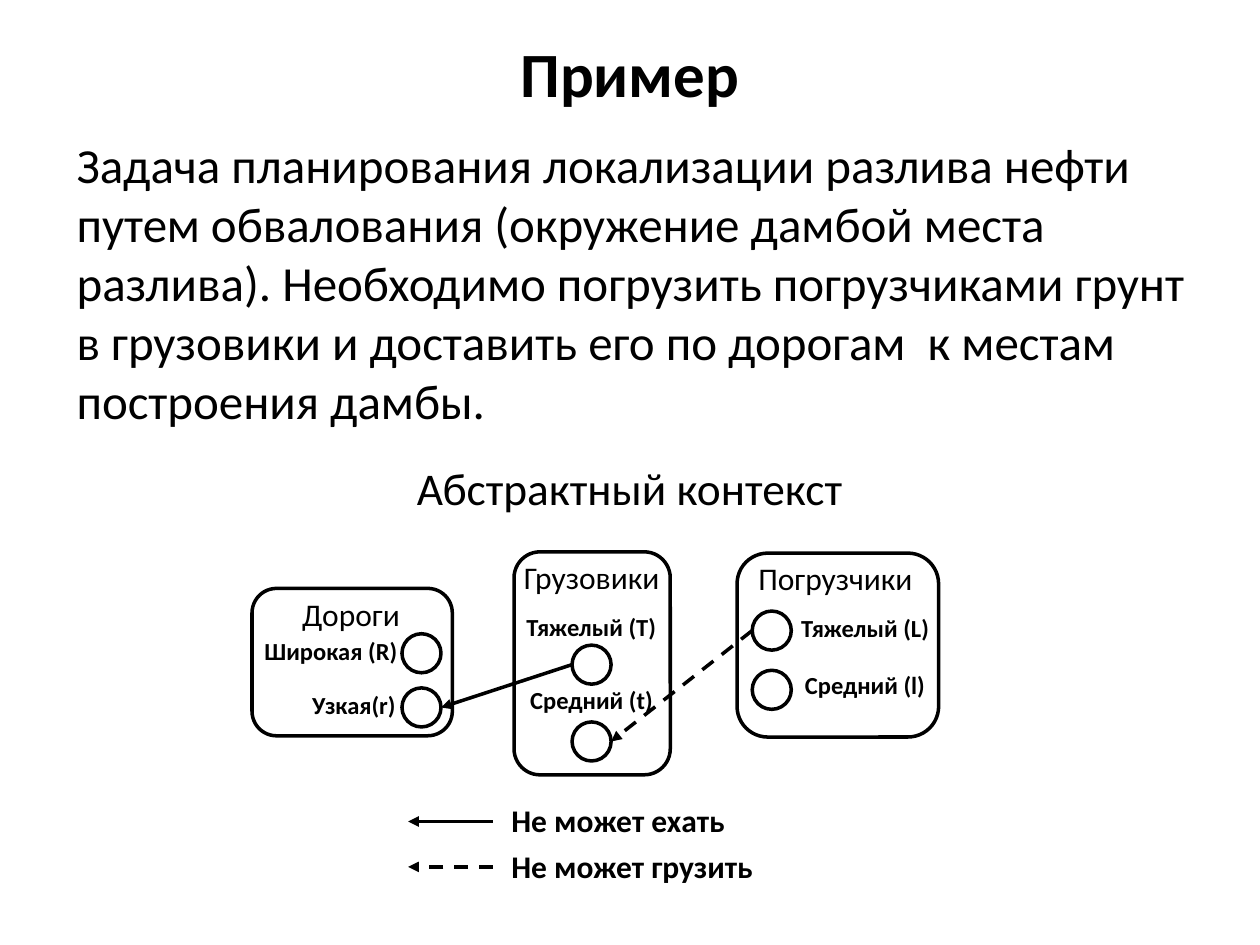
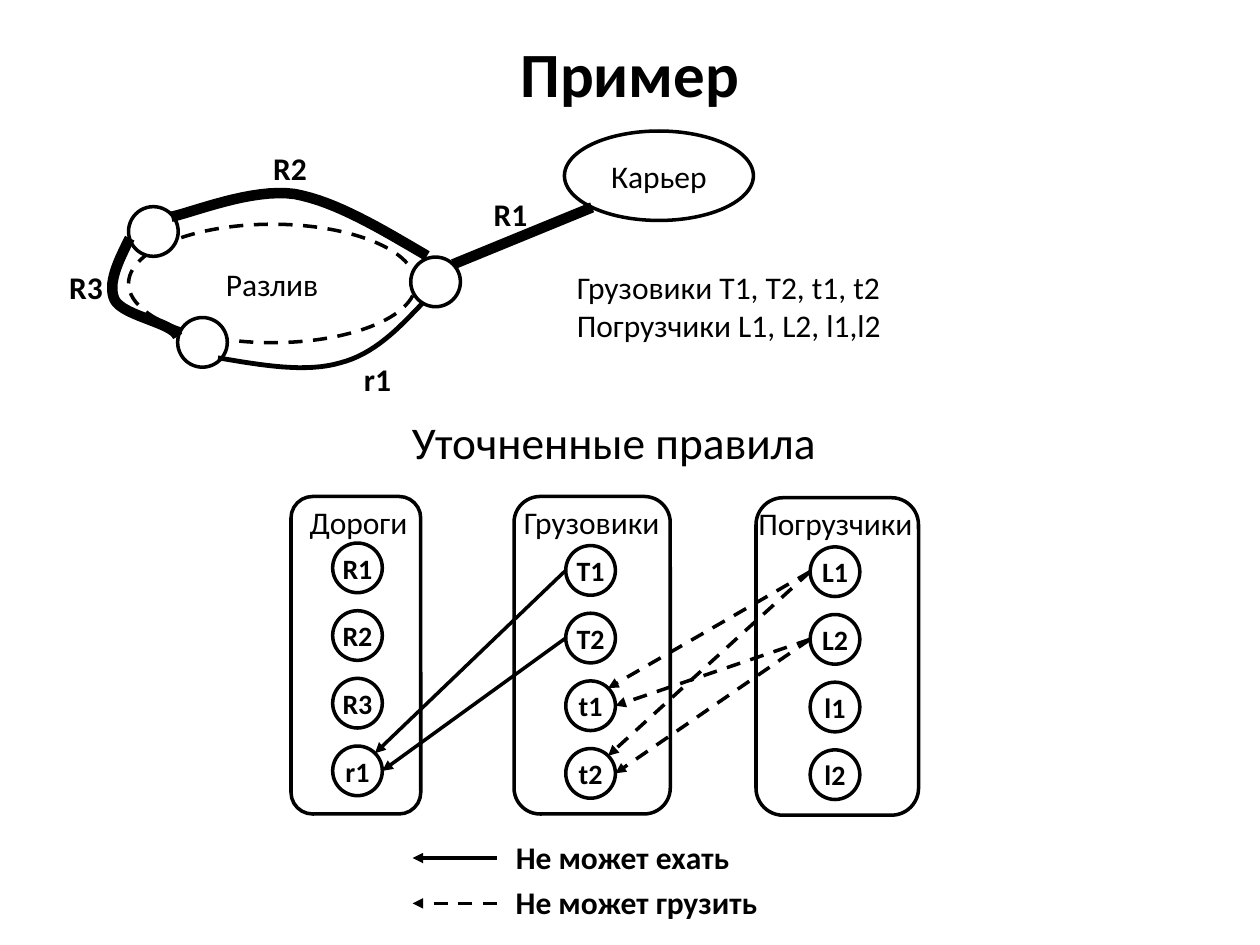
import math
from dataclasses import dataclass

from lxml import etree
from pptx import Presentation
from pptx import util as u
from pptx.dml.color import RGBColor
from pptx.enum import dml, shapes, text
from pptx.oxml.ns import qn

COLS, ROWS = 100, 75
LEFT, RIGHT, UPPER_RIGHT, LOWER_LEFT = 180, 0, 45, 225
SHAPE = shapes.MSO_SHAPE


@dataclass(frozen=True)
class Theme:
    font: str = "Calibri"
    ink: RGBColor = RGBColor(0, 0, 0)
    paper: RGBColor = RGBColor(255, 255, 255)
    title: float = 36
    body: float = 28
    heading: float = 25.9
    label: float = 18
    node: float = 16
    small: float = 14
    thin: float = 2
    narrow_road: float = 2.75
    wide_road: float = 6


def edge(sp, angle):
    """Point on an ellipse, in EMU; the angle runs anticlockwise from the right."""
    a = math.radians(angle)
    return (round(sp.left + sp.width * (1 + math.cos(a)) / 2),
            round(sp.top + sp.height * (1 - math.sin(a)) / 2))


def bezier(p0, p1, p2, p3, steps=16):
    """Points of a cubic curve after its start."""
    for i in range(1, steps + 1):
        t = i / steps
        k = ((1 - t) ** 3, 3 * t * (1 - t) ** 2, 3 * t * t * (1 - t), t ** 3)
        yield tuple(sum(c * v for c, v in zip(k, axis))
                    for axis in zip(p0, p1, p2, p3))


class Deck:
    """Draws on the current slide; lengths are grid columns and rows."""

    def __init__(self, theme):
        self.t = theme
        self.prs = Presentation()
        self.prs.slide_width, self.prs.slide_height = u.Inches(10), u.Inches(7.5)
        self.s = None

    def at(self, col, row):
        return (round(col * self.prs.slide_width / COLS),
                round(row * self.prs.slide_height / ROWS))

    def slide(self, title):
        self.s = self.prs.slides.add_slide(self.prs.slide_layouts[6])
        sp = self.text(5, -0.5, 90, 12.5, title, self.t.title, True, wrap=True)
        sp.text_frame.vertical_anchor = text.MSO_ANCHOR.MIDDLE
        sp.text_frame.paragraphs[0].alignment = text.PP_ALIGN.CENTER

    def add_lines(self, tf, lines, size, bold=False, align=None):
        for i, line in enumerate(lines.split("\n")):
            p = tf.add_paragraph() if i else tf.paragraphs[0]
            p.alignment = align
            r = p.add_run()
            r.text = line
            r.font.name, r.font.size, r.font.bold = self.t.font, u.Pt(size), bold
            r.font.color.rgb = self.t.ink

    def text(self, x, y, w, h, lines, size, bold=False, wrap=False):
        sp = self.s.shapes.add_textbox(*self.at(x, y), *self.at(w, h))
        tf = sp.text_frame
        tf.word_wrap = wrap
        tf.auto_size = (text.MSO_AUTO_SIZE.NONE if wrap
                        else text.MSO_AUTO_SIZE.SHAPE_TO_FIT_TEXT)
        self.add_lines(tf, lines, size, bold)
        return sp

    def label(self, x, y, w, words, bold=False):
        self.text(x, y, w, 4, words, self.t.label, bold)

    def note(self, x, y, w, words):
        self.text(x, y, w, 3.4, words, self.t.small, True)

    def heading(self, x, y, words):
        self.text(x, y, 36.3, 5.1, words, self.t.heading, wrap=True)

    def stroke(self, sp, width, dashed=False):
        sp.line.color.rgb = self.t.ink
        sp.line.width = u.Pt(width)
        if dashed:
            sp.line.dash_style = dml.MSO_LINE.DASH

    def shape(self, kind, x, y, w, h, dashed=False):
        sp = self.s.shapes.add_shape(kind, *self.at(x, y), *self.at(w, h))
        sp.shadow.inherit = False
        sp.fill.solid()
        sp.fill.fore_color.rgb = self.t.paper
        self.stroke(sp, self.t.thin, dashed)
        return sp

    def place(self, x, y, w, h, name, dashed=False):
        sp = self.shape(SHAPE.OVAL, x, y, w, h, dashed)
        sp.text_frame.vertical_anchor = text.MSO_ANCHOR.MIDDLE
        self.add_lines(sp.text_frame, name, self.t.label, align=text.PP_ALIGN.CENTER)
        return sp

    def node(self, x, y, size, name=None):
        sp = self.shape(SHAPE.OVAL, x, y, size, size)
        if name:
            tf = sp.text_frame
            tf.margin_left = tf.margin_right = tf.margin_top = tf.margin_bottom = 0
            tf.vertical_anchor = text.MSO_ANCHOR.MIDDLE
            tf.word_wrap = False
            self.add_lines(tf, name, self.t.node, True, text.PP_ALIGN.CENTER)
        return sp

    def panel(self, x, y, w, h, title, title_x, title_w):
        self.shape(SHAPE.ROUNDED_RECTANGLE, x, y, w, h)
        self.label(title_x, y, title_w, title)

    def line(self, start, end, width=None, dashed=False, arrow=True):
        """Straight line between two EMU points."""
        c = self.s.shapes.add_connector(shapes.MSO_CONNECTOR.STRAIGHT, *start, *end)
        self.stroke(c, width or self.t.thin, dashed)
        if arrow:
            etree.SubElement(c.get_or_add_ln(), qn("a:tailEnd"), type="triangle")
        etree.SubElement(c.element.spPr, qn("a:effectLst"))

    def curve(self, width, start, *segments):
        """Open road of cubic segments, each two handles and an end."""
        points, pen = [], start
        for segment in segments:
            points += bezier(pen, *segment)
            pen = segment[-1]
        b = self.s.shapes.build_freeform(*self.at(*start))
        b.add_line_segments([self.at(*pt) for pt in points], close=False)
        sp = b.convert_to_shape()
        sp.shadow.inherit = False
        sp.fill.background()
        self.stroke(sp, width)

    def legend(self, x, y):
        entries = (("Не может ехать", 19.1, False), ("Не может грузить", 21.3, True))
        for i, (words, w, dashed) in enumerate(entries):
            row = y + 3.6 * i
            self.line(self.at(x + 6.7, row), self.at(x, row), dashed=dashed)
            self.label(x + 7.2, row - 2.1, w, words, True)


def context_slide(d):
    d.slide("Пример")
    d.text(5.1, 10.2, 90, 24.2,
           "Задача планирования локализации разлива нефти путем обвалования "
           "(окружение дамбой места разлива). Необходимо погрузить погрузчиками "
           "грунт в грузовики и доставить его по дорогам  к местам построения дамбы.",
           d.t.body, wrap=True)

    size = 3.1
    d.panel(20, 46.7, 15.9, 11.7, "Дороги", 23, 9.9)
    d.node(31.9, 50.3, size)
    d.note(20, 50, 12.6, "Широкая (R)")
    narrow = d.node(31.9, 54.6, size)
    d.note(23.8, 54.3, 8.7, "Узкая(r)")

    d.panel(40.8, 43.8, 12.4, 17.7, "Грузовики", 40.6, 12.9)
    d.note(40.8, 48.1, 12.4, "Тяжелый (T)")
    heavy_truck = d.node(45.4, 51.2, size)
    d.note(41.1, 53.9, 11.8, "Средний (t)")
    medium_truck = d.node(45.4, 57.3, size)

    d.panel(58.5, 43.9, 16, 14.6, "Погрузчики", 59.2, 14.4)
    d.note(62.6, 48.2, 12.2, "Тяжелый (L)")
    heavy_loader = d.node(59.7, 48.5, size)
    d.note(62.9, 52.7, 11.6, "Средний (l)")
    d.node(59.7, 53.2, size)

    d.line(edge(heavy_truck, LEFT), edge(narrow, RIGHT))
    d.line(edge(heavy_loader, LEFT), edge(medium_truck, RIGHT), dashed=True)
    d.legend(32.4, 65.2)
    d.heading(32.1, 36, "Абстрактный контекст")


def road_map(d, size):
    quarry = d.place(44.8, 10.4, 15, 7.1, "Карьер")
    d.place(10.2, 17.8, 22.8, 9.4, "Разлив", dashed=True)
    junction = d.node(32.6, 20.4, size)
    d.node(10.2, 16.4, size)
    d.node(14.1, 25.2, size)
    d.line(edge(quarry, LOWER_LEFT), edge(junction, UPPER_RIGHT),
           d.t.wide_road, arrow=False)
    d.curve(d.t.narrow_road, (33.5, 24.1),
            ((31.6, 26.1), (29.7, 28.1), (27, 28.8)),
            ((24.3, 29.6), (20.8, 29), (17.3, 28.4)))
    d.curve(d.t.wide_road, (33.9, 20.3),
            ((30.3, 18.2), (26.7, 16), (23.4, 15.4)),
            ((20, 14.9), (15.2, 16.9), (13.6, 17.2)))
    d.curve(d.t.wide_road, (10.3, 18.9),
            ((9.4, 20.7), (8.5, 22.5), (9.1, 23.8)),
            ((9.8, 25.1), (13.7, 25.6), (14.1, 26.7)))
    for name, x, y in (("R1", 38.2, 15), ("R2", 20.7, 11.3),
                       ("R3", 4.5, 20.8), ("r1", 27.9, 28.1)):
        d.label(x, y, 4.7 if name[0] == "R" else 4.2, name, True)
    d.text(44.8, 20.8, 26.4, 7.1,
           "Грузовики T1, T2, t1, t2\nПогрузчики L1, L2, l1,l2", d.t.label)


def rules_slide(d):
    size, pitch = 3.94, 5.37
    d.slide("Пример")
    d.heading(31.7, 32.4, "Уточненные правила")
    road_map(d, size)
    d.legend(32.75, 68.1)

    panels = (
        ((23.1, 39.4, 10.3, 25.2, "Дороги", 23.6, 9.9), 26.4, 43.1, "R1 R2 R3 r1"),
        ((40.8, 39.4, 12.4, 25.2, "Грузовики", 40.6, 12.9), 44.9, 43.3, "T1 T2 t1 t2"),
        ((60, 39.5, 12.9, 25.2, "Погрузчики", 59.2, 14.4), 64.3, 43.4, "L1 L2 l1 l2"),
    )
    nodes = {}
    for panel, x, y, names in panels:
        d.panel(*panel)
        for i, name in enumerate(names.split()):
            nodes[name] = d.node(x, y + pitch * i, size, name)

    rules = (("T1", "r1", UPPER_RIGHT), ("T2", "r1", RIGHT),
             ("L1", "t1", UPPER_RIGHT), ("L1", "t2", UPPER_RIGHT),
             ("L2", "t1", RIGHT), ("L2", "t2", RIGHT))
    for source, target, side in rules:
        d.line(edge(nodes[source], LEFT), edge(nodes[target], side),
               dashed=source.startswith("L"))


def main():
    d = Deck(Theme())
    context_slide(d)
    rules_slide(d)
    d.prs.save("out.pptx")


if __name__ == "__main__":
    main()
